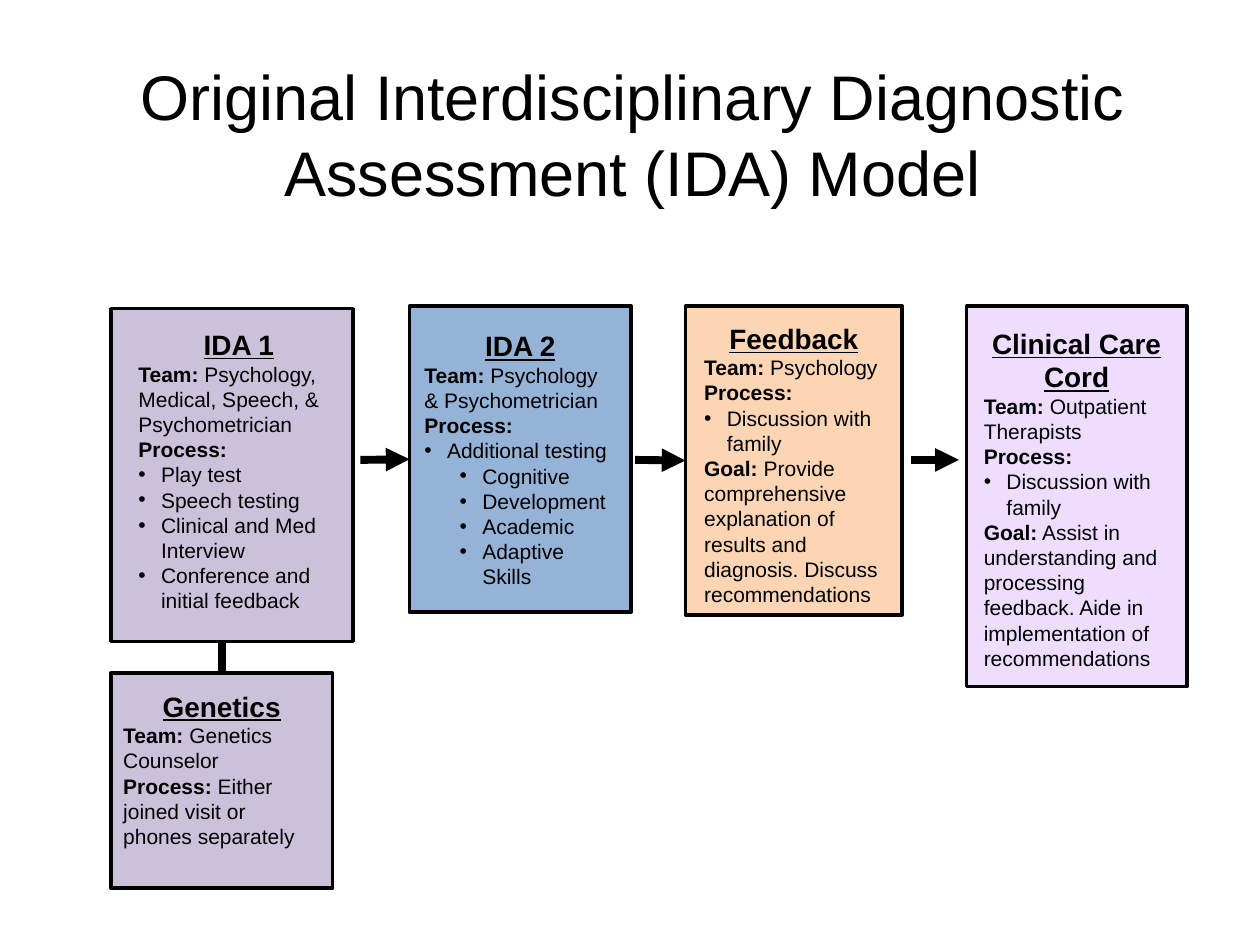
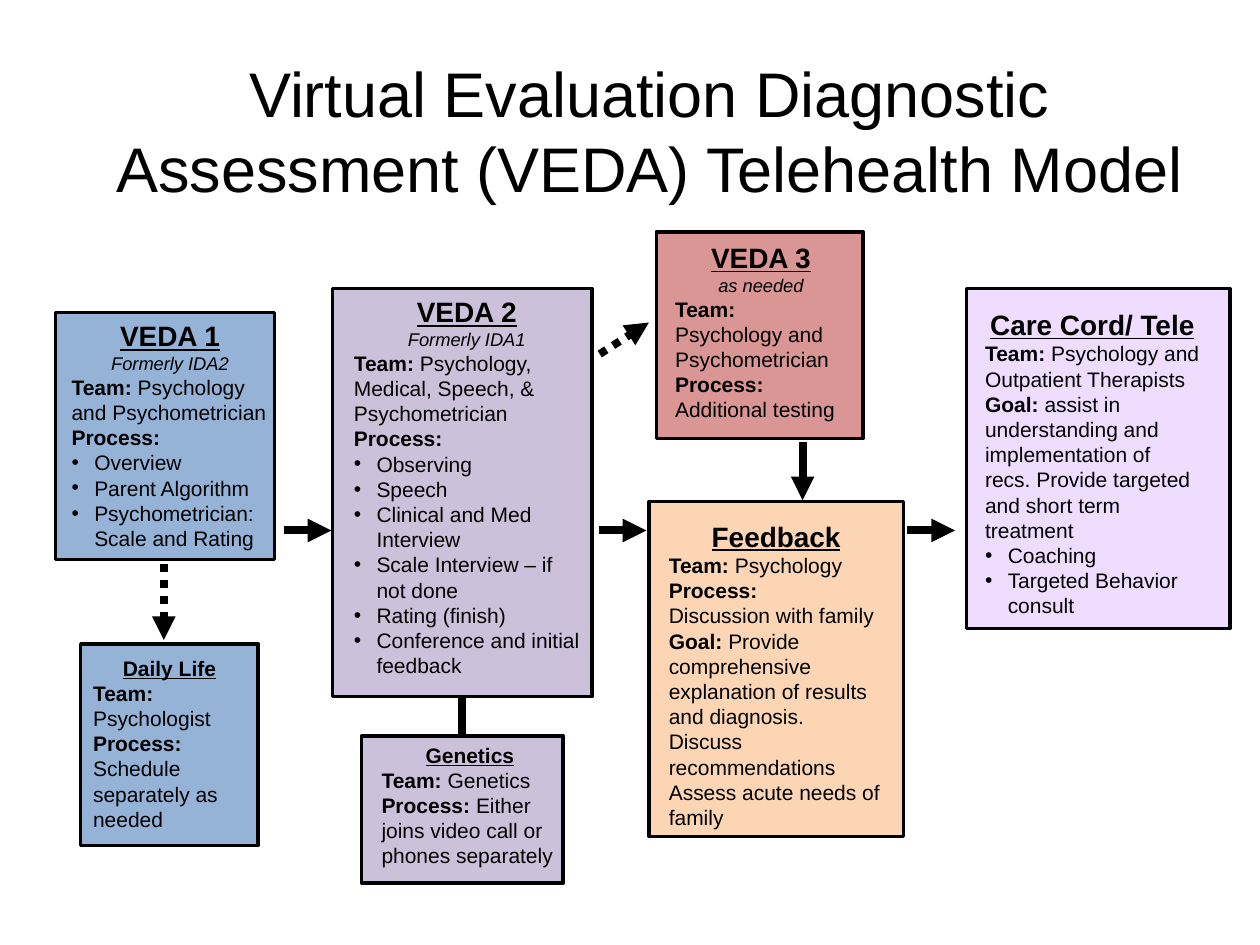
from pptx import Presentation
from pptx.dml.color import RGBColor
from pptx.enum.dml import MSO_LINE
from pptx.enum.shapes import MSO_CONNECTOR, MSO_SHAPE
from pptx.enum.text import PP_ALIGN
from pptx.oxml.ns import qn
from pptx.util import Inches, Pt
from lxml.etree import SubElement

FONT = "Arial"
BLACK = "000000"
BLUE = "95B3D7"
PURPLE = "CCC1DA"
ORANGE = "FCD5B5"
LILAC = "EEDDFF"
ROSE = "D99694"
LABELS = ("Team:", "Process:", "Goal:")
BULLET = "•"
BULLET_INDENTS = (0.18, 0.46)
HANGING = 0.18
TOP, LEFT = 0, 1
BOTTOM = 2


def color(hex_code):
    return RGBColor.from_string(hex_code)


def inches(*lengths):
    return [Inches(length) for length in lengths]


def set_font(paragraph, size, bold=False, underline=False, italic=False):
    font = paragraph.font
    font.name, font.size = FONT, Pt(size)
    font.bold, font.underline, font.italic = bold, underline, italic
    font.color.rgb = color(BLACK)


def add_text_frame(shapes, area):
    frame = shapes.add_textbox(*inches(*area)).text_frame
    frame.word_wrap = True
    return frame


def add_title(slide, area, text):
    title = add_text_frame(slide.shapes, area).paragraphs[0]
    title.add_run().text = text
    title.alignment = PP_ALIGN.CENTER
    set_font(title, 36)


def add_bullet(paragraph, level):
    paragraph.level = level
    properties = paragraph._p.get_or_add_pPr()
    properties.set("marL", str(Inches(BULLET_INDENTS[level])))
    properties.set("indent", str(-Inches(HANGING)))
    SubElement(properties, qn("a:buFont"), typeface=FONT)
    SubElement(properties, qn("a:buChar"), char=BULLET)


def add_line(paragraph, line):
    text = line.lstrip(BULLET)
    depth = len(line) - len(text)
    label = next((name for name in LABELS if text.startswith(name)), "")
    if depth:
        add_bullet(paragraph, depth - 1)
    set_font(paragraph, 12)
    if label:
        label_run = paragraph.add_run()
        label_run.text = label
        label_run.font.bold = True
    detail = text[len(label):]
    if detail:
        paragraph.add_run().text = detail


def add_step(slide, area, fill, text_area, heading, lines, note="", heading_size=16):
    group = slide.shapes.add_group_shape()
    box = group.shapes.add_shape(MSO_SHAPE.RECTANGLE, *inches(*area))
    box.shadow.inherit = False
    box.fill.solid()
    box.fill.fore_color.rgb = color(fill)
    box.line.color.rgb = color(BLACK)
    box.line.width = Pt(2)

    frame = add_text_frame(group.shapes, text_area)
    head = frame.paragraphs[0]
    head.add_run().text = heading
    head.alignment = PP_ALIGN.CENTER
    set_font(head, heading_size, bold=True, underline=True)
    if note:
        remark = frame.add_paragraph()
        remark.add_run().text = note
        remark.alignment = PP_ALIGN.CENTER
        set_font(remark, 10.5, italic=True)
    for line in lines:
        add_line(frame.add_paragraph(), line)
    return box


def add_link(slide, start, end, arrow=True, dotted=False):
    link = slide.shapes.add_connector(MSO_CONNECTOR.STRAIGHT, *inches(*start, *end))
    link.line.color.rgb = color(BLACK)
    link.line.width = Pt(4.5)
    if dotted:
        link.line.dash_style = MSO_LINE.ROUND_DOT
    if arrow:
        SubElement(link.line._get_or_add_ln(), qn("a:tailEnd"), type="triangle")
    SubElement(link._element.spPr, qn("a:effectLst"))
    return link


def build_ida_slide(slide):
    ida2 = add_step(
        slide, (3.25, 2.43, 1.76, 2.43), BLUE, (3.27, 2.56, 1.72, 2.19), "IDA 2",
        ["Team: Psychology & Psychometrician", "Process:", "•Additional testing",
         "••Cognitive", "••Development", "••Academic", "••Adaptive Skills"])
    add_step(
        slide, (0.88, 2.45, 1.92, 2.64), PURPLE, (1, 2.55, 1.79, 2.62), "IDA 1",
        ["Team: Psychology, Medical, Speech, & Psychometrician", "Process:", "•Play test",
         "•Speech testing", "•Clinical and Med Interview",
         "•Conference and initial feedback"])
    feedback = add_step(
        slide, (5.44, 2.43, 1.72, 2.45), ORANGE, (5.49, 2.5, 1.62, 2.41), "Feedback",
        ["Team: Psychology", "Process:", "•Discussion with family",
         "Goal: Provide comprehensive explanation of results and diagnosis. "
         "Discuss recommendations"])
    add_step(
        slide, (7.67, 2.43, 1.75, 3.02), LILAC, (7.71, 2.54, 1.67, 2.86),
        "Clinical Care Cord",
        ["Team: Outpatient Therapists", "Process:", "•Discussion with family",
         "Goal: Assist in understanding and processing feedback. "
         "Aide in implementation of recommendations"])
    genetics = add_step(
        slide, (0.88, 5.34, 1.76, 1.71), PURPLE, (0.88, 5.42, 1.76, 1.38), "Genetics",
        ["Team: Genetics Counselor", "Process: Either joined visit or phones separately"])

    add_link(slide, (1.76, 5.09), (1.76, 5.34), arrow=False).end_connect(genetics, TOP)
    add_link(slide, (2.86, 3.65), (3.25, 3.65)).end_connect(ida2, LEFT)
    add_link(slide, (5.04, 3.65), (5.44, 3.65)).end_connect(feedback, LEFT)
    add_link(slide, (7.23, 3.65), (7.61, 3.65))
    add_title(slide, (0.96, 0.41, 8.12, 1.31),
              "Original Interdisciplinary Diagnostic Assessment (IDA) Model")


def build_veda_slide(slide):
    add_step(
        slide, (0.44, 2.48, 1.74, 1.96), BLUE, (0.47, 2.48, 1.76, 2.18), "VEDA 1",
        ["Team: Psychology and Psychometrician", "Process:", "•Overview",
         "•Parent Algorithm", "•Psychometrician: Scale and Rating"],
        note="Formerly IDA2")
    add_step(
        slide, (0.64, 5.11, 1.41, 1.6), BLUE, (0.64, 5.15, 1.41, 1.51), "Daily Life",
        ["Team: Psychologist", "Process: Schedule separately as needed"],
        heading_size=12)
    veda2 = add_step(
        slide, (2.64, 2.29, 2.06, 3.24), PURPLE, (2.71, 2.29, 1.99, 3.17), "VEDA 2",
        ["Team: Psychology, Medical, Speech, & Psychometrician", "Process:", "•Observing",
         "•Speech", "•Clinical and Med Interview", "•Scale Interview – if not done",
         "•Rating (finish)", "•Conference and initial feedback"],
        note="Formerly IDA1")
    add_step(
        slide, (5.21, 1.84, 1.64, 1.64), ROSE, (5.26, 1.86, 1.56, 1.92), "VEDA 3",
        ["Team: Psychology and Psychometrician", "Process: Additional testing"],
        note="as needed")
    add_step(
        slide, (5.15, 3.98, 2.02, 2.66), ORANGE, (5.21, 4.07, 1.9, 2.39), "Feedback",
        ["Team: Psychology", "Process:", "Discussion with family",
         "Goal: Provide comprehensive explanation of results and diagnosis. "
         "Discuss recommendations", "Assess acute needs of family"])
    add_step(
        slide, (7.67, 2.29, 2.09, 2.7), LILAC, (7.72, 2.39, 1.9, 2.69), "Care Cord/ Tele",
        ["Team: Psychology and Outpatient Therapists",
         "Goal: assist in understanding and implementation of recs. "
         "Provide targeted and short term treatment",
         "•Coaching", "•Targeted Behavior consult"])
    genetics = add_step(
        slide, (2.87, 5.84, 1.6, 1.17), PURPLE, (2.93, 5.84, 1.6, 1.11), "Genetics",
        ["Team: Genetics", "Process: Either joins video call or phones separately"],
        heading_size=12)

    genetics_link = add_link(slide, (3.67, 5.53), (3.67, 5.84), arrow=False)
    genetics_link.begin_connect(veda2, BOTTOM)
    genetics_link.end_connect(genetics, TOP)
    for start in (2.25, 4.75, 7.2):
        add_link(slide, (start, 4.21), (start + 0.38, 4.21))
    add_link(slide, (4.76, 2.81), (5.15, 2.56), dotted=True)
    add_link(slide, (6.37, 3.51), (6.37, 3.97))
    add_link(slide, (1.3, 4.48), (1.3, 5.08), dotted=True)
    add_title(slide, (0.69, 0.38, 8.93, 1.31),
              "Virtual Evaluation Diagnostic Assessment (VEDA) Telehealth Model")


def main():
    deck = Presentation()
    deck.slide_width, deck.slide_height = inches(10, 7.5)
    blank = deck.slide_layouts[6]
    for build in (build_ida_slide, build_veda_slide):
        build(deck.slides.add_slide(blank))
    deck.save("out.pptx")


if __name__ == "__main__":
    main()
